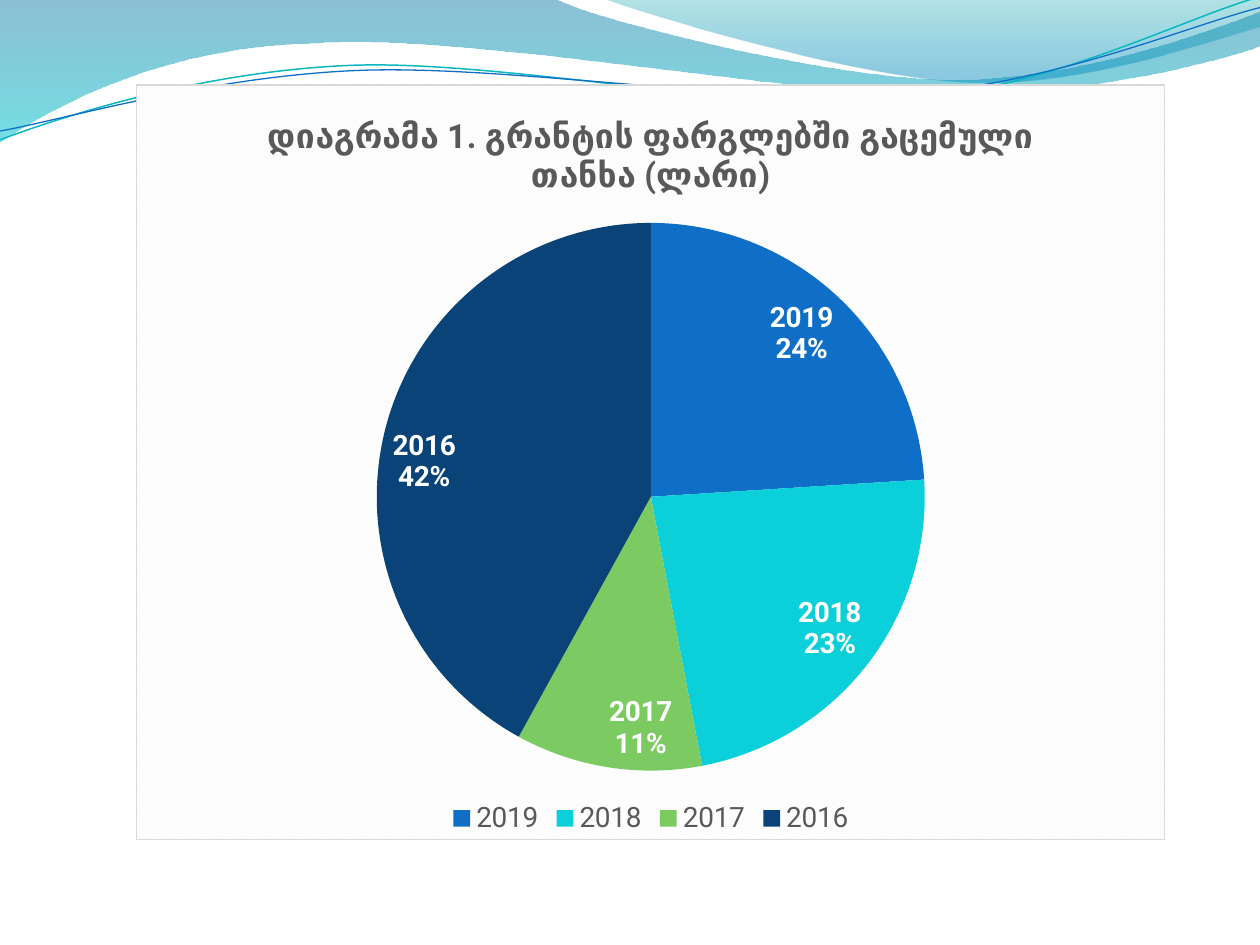
from lxml import etree
from pptx import Presentation
from pptx.chart.data import CategoryChartData
from pptx.dml.color import RGBColor
from pptx.enum.chart import XL_CHART_TYPE as Kind
from pptx.enum.chart import XL_LABEL_POSITION as Spot
from pptx.enum.chart import XL_LEGEND_POSITION as Side
from pptx.oxml import parse_xml
from pptx.oxml.ns import nsdecls, qn
from pptx.util import Inches, Pt

FONT = "Roboto"
COLORS = {
    "white": "FFFFFF", "text": "595959", "border": "D9D9D9", "hatch": "F2F2F2",
    "deep": "0074A1", "aqua": "00C6CF", "teal": "00A1A9", "sky": "008BBF",
    "curl": "0AB8BF", "blue": "0F6FC6", "cyan": "0BD0D9", "green": "7CCA62",
    "navy": "094377",
}
# Year: share in percent, slice colour
SHARES = {"2019": (24, "blue"), "2018": (23, "cyan"),
          "2017": (11, "green"), "2016": (42, "navy")}
TITLE = "დიაგრამა 1. გრანტის ფარგლებში გაცემული თანხა (ლარი)"

# Outlines: a pair is a straight step, six numbers are a Bézier step
LEFT_WAVE = [(0, 0), (4.4, -0.01), (4.76, 0.17, 6.64, 0.63, 7.58, 0.63),
             (8.53, 0.63, 9.58, 0.26, 10, 0.09), (10.01, 0.36),
             (9.83, 0.44, 8.7, 0.76, 7.46, 0.75),
             (6.22, 0.75, 3.82, 0.28, 2.57, 0.34),
             (1.29, 0.36, 0.46, 0.83, -0.01, 1.13), (0, 0)]
RIGHT_WAVE = [(4.79, -0.01), (5.09, 0.11, 6.82, 0.62, 7.69, 0.65),
              (8.56, 0.69, 9.61, 0.32, 10, 0.21), (10, 0), (4.79, -0.01)]
TEAL_CURL = [(0, 1.11), (0.48, 0.93, 1.58, 0.57, 2.77, 0.52),
             (3.95, 0.47, 5.93, 0.89, 7.13, 0.8),
             (8.33, 0.71, 9.38, 0.15, 9.98, -0.02)]
BLUE_CURL = [(0, 1.04), (0.47, 0.96, 1.64, 0.61, 2.83, 0.56),
             (4.03, 0.51, 5.97, 0.84, 7.17, 0.75),
             (8.36, 0.67, 9.41, 0.21, 10, 0.06)]


def rgb(name):
    return RGBColor.from_string(COLORS[name])


def add_path(slide, steps, close):
    """Freeform whose six-number steps become true Bézier curves."""
    dots = [(Inches(step[i]), Inches(step[i + 1]))
            for step in steps for i in range(0, len(step), 2)]
    pen = slide.shapes.build_freeform(*dots[0])
    pen.add_line_segments(dots[1:], close=close)
    shape = pen.convert_to_shape()
    shape.shadow.inherit = False
    lines = iter(list(shape.element.iter(qn("a:lnTo"))))
    for step in steps[1:]:
        line = next(lines)
        if len(step) == 6:
            curve = etree.Element(qn("a:cubicBezTo"))
            line.addprevious(curve)
            for part in (line, next(lines), next(lines)):
                curve.append(part[0])
                part.getparent().remove(part)
    return shape


def add_wave(slide, steps, stops):
    """Closed shape with a see-through gradient from top to bottom."""
    shape = add_path(slide, steps, True)
    shape.line.fill.background()
    shape.fill.background()
    marks = "".join(
        f'<a:gs pos="{pos * 1000}"><a:srgbClr val="{COLORS[name]}">'
        f'<a:alpha val="{alpha * 1000}"/></a:srgbClr></a:gs>'
        for pos, name, alpha in stops)
    grad = parse_xml(f'<a:gradFill {nsdecls("a")} rotWithShape="1">'
                     f'<a:gsLst>{marks}</a:gsLst>'
                     '<a:lin ang="5400000" scaled="0"/></a:gradFill>')
    props = shape.element.spPr
    props.replace(props.find(qn("a:noFill")), grad)


def add_curl(slide, steps, name, width):
    shape = add_path(slide, steps, False)
    shape.fill.background()
    shape.line.color.rgb = rgb(name)
    shape.line.width = Pt(width)


def set_font(font, size, name, bold=False):
    font.name, font.size, font.bold = FONT, Pt(size), bold
    font.color.rgb = rgb(name)


def set_frame(chart):
    """Hatched ground and thin border of the chart area."""
    props = parse_xml(
        f'<c:spPr {nsdecls("c", "a")}><a:pattFill prst="dkDnDiag">'
        f'<a:fgClr><a:srgbClr val="{COLORS["hatch"]}"/></a:fgClr>'
        f'<a:bgClr><a:srgbClr val="{COLORS["white"]}"/></a:bgClr></a:pattFill>'
        f'<a:ln w="{Pt(0.75)}"><a:solidFill>'
        f'<a:srgbClr val="{COLORS["border"]}"/></a:solidFill></a:ln></c:spPr>')
    chart.element.find(qn("c:chart")).addnext(props)


def set_labels(series):
    labels = series.data_labels
    labels.show_category_name = labels.show_percentage = True
    labels.show_value = False
    labels.position = Spot.INSIDE_END
    set_font(labels.font, 16, "white", True)
    gap = etree.Element(qn("c:separator"))
    gap.text = "\n"
    node = series._element.find(qn("c:dLbls"))
    node.find(qn("c:showBubbleSize")).addnext(gap)


def add_pie(slide):
    data = CategoryChartData()
    data.categories = list(SHARES)
    data.add_series("Series 1", [share for share, _ in SHARES.values()])
    chart = slide.shapes.add_chart(
        Kind.PIE, Inches(1.08), Inches(0.67), Inches(8.17), Inches(6), data).chart
    set_font(chart.font, 16, "text")
    # Title and legend
    chart.has_title = True
    para = chart.chart_title.text_frame.paragraphs[0]
    para.text = TITLE
    set_font(para.runs[0].font, 19.2, "text", True)
    chart.chart_title.include_in_layout = False
    chart.has_legend = True
    chart.legend.position = Side.BOTTOM
    chart.legend.include_in_layout = False
    set_font(chart.legend.font, 16, "text")
    # Slices
    plot = chart.plots[0]
    plot.vary_by_categories = True
    series = plot.series[0]
    for i, (_, name) in enumerate(SHARES.values()):
        fill = series.points[i].format.fill
        fill.solid()
        fill.fore_color.rgb = rgb(name)
    set_labels(series)
    set_frame(chart)


def main():
    deck = Presentation()
    deck.slide_width, deck.slide_height = Inches(10), Inches(7.5)
    slide = deck.slides.add_slide(deck.slide_layouts[6])
    # Waves along the top
    add_wave(slide, LEFT_WAVE, [(0, "deep", 45), (100, "aqua", 55)])
    add_wave(slide, RIGHT_WAVE, [(0, "teal", 30), (80, "sky", 45)])
    add_curl(slide, TEAL_CURL, "curl", 0.85)
    add_curl(slide, BLUE_CURL, "blue", 0.75)
    # Pie chart
    add_pie(slide)
    deck.save("out.pptx")


if __name__ == "__main__":
    main()
